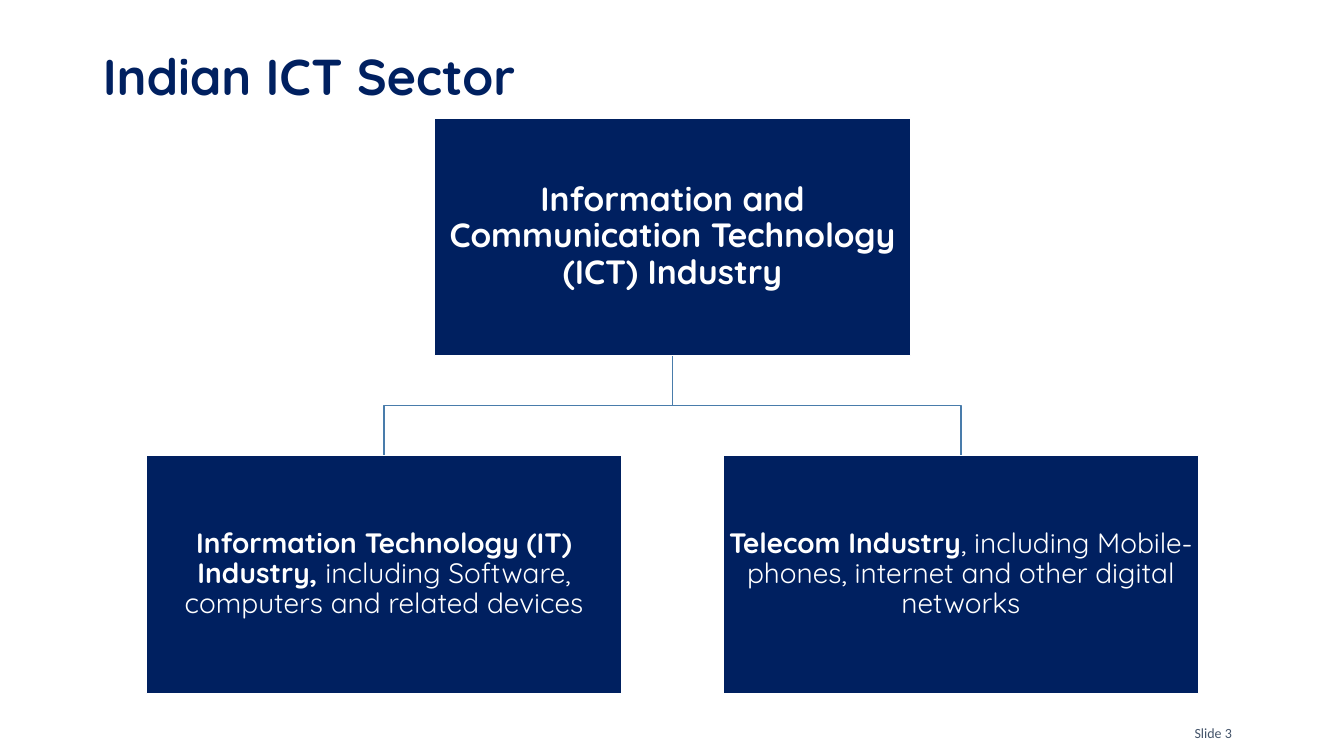
from pptx import Presentation
from pptx import util as u
from pptx.dml import color
from pptx.enum import shapes, text

NAVY, WHITE, LINE, GREY = "002060", "FFFFFF", "497CAB", "44546A"
BOX_WIDTH, BOX_HEIGHT = 4.72, 2.36
CENTRE, ROOT_TOP, BRANCH_TOP, BRANCH_OFFSET = 6.67, 1.17, 4.52, 2.86


def rgb(value):
    return color.RGBColor.from_string(value)


class ChartSlide:
    """Hold the style and the slide, and add each kind of element."""

    def __init__(self, presentation, font):
        self.font = font
        self.slide = presentation.slides.add_slide(presentation.slide_layouts[5])

    def format_run(self, run, size, colour, bold=False, font=None):
        run.font.name = font or self.font
        run.font.size = u.Pt(size)
        run.font.bold = bold
        run.font.color.rgb = rgb(colour)

    def title(self, wording, left, top, width, height):
        title = self.slide.shapes.title
        title.left, title.top = u.Inches(left), u.Inches(top)
        title.width, title.height = u.Inches(width), u.Inches(height)
        frame = title.text_frame
        frame.text = wording
        frame.auto_size = text.MSO_AUTO_SIZE.NONE
        frame.vertical_anchor = text.MSO_ANCHOR.MIDDLE
        paragraph = frame.paragraphs[0]
        paragraph.alignment = text.PP_ALIGN.LEFT
        paragraph.line_spacing = 0.9
        self.format_run(paragraph.runs[0], 36, NAVY, bold=True)

    def branch(self, start_x, start_y, end_x, end_y):
        middle = (start_y + end_y) / 2
        builder = self.slide.shapes.build_freeform(
            u.Inches(start_x), u.Inches(start_y))
        corners = [(start_x, middle), (end_x, middle), (end_x, end_y)]
        builder.add_line_segments(
            [(u.Inches(x), u.Inches(y)) for x, y in corners], close=False)
        shape = builder.convert_to_shape()
        shape.shadow.inherit = False
        shape.fill.background()
        shape.line.color.rgb = rgb(LINE)
        shape.line.width = u.Pt(1)

    def box(self, centre, top, size, inset, bold_words, plain_words=""):
        shape = self.slide.shapes.add_shape(
            shapes.MSO_SHAPE.RECTANGLE, u.Inches(centre - BOX_WIDTH / 2),
            u.Inches(top), u.Inches(BOX_WIDTH), u.Inches(BOX_HEIGHT))
        shape.shadow.inherit = False
        shape.fill.solid()
        shape.fill.fore_color.rgb = rgb(NAVY)
        shape.line.color.rgb = rgb(WHITE)
        shape.line.width = u.Pt(1)
        frame = shape.text_frame
        frame.word_wrap = True
        frame.vertical_anchor = text.MSO_ANCHOR.MIDDLE
        frame.margin_left = frame.margin_right = u.Inches(inset)
        frame.margin_top = frame.margin_bottom = u.Inches(inset)
        paragraph = frame.paragraphs[0]
        paragraph.alignment = text.PP_ALIGN.CENTER
        paragraph.line_spacing = 0.9
        for words, bold in ((bold_words, True), (plain_words, False)):
            if words:
                run = paragraph.add_run()
                run.text = words
                self.format_run(run, size, WHITE, bold)

    def label(self, wording, left, top, width, height):
        label = self.slide.shapes.add_textbox(
            u.Inches(left), u.Inches(top), u.Inches(width), u.Inches(height))
        label.text_frame.text = wording
        label.text_frame.word_wrap = False
        run = label.text_frame.paragraphs[0].runs[0]
        self.format_run(run, 10, GREY, font="Calibri")


def main():
    presentation = Presentation()
    presentation.slide_width = u.Inches(13.33)
    presentation.slide_height = u.Inches(7.5)
    chart = ChartSlide(presentation, "Quicksand")
    chart.label("Slide 3", 11.75, 7.14, 0.66, 0.27)
    chart.title("Indian ICT Sector", 0.92, 0.4, 11.5, 0.77)

    branches = [
        ("Information Technology (IT) Industry, ",
         "including Software, computers and related devices"),
        ("Telecom Industry",
         ", including Mobile-phones, internet and other digital networks"),
    ]
    centres = [CENTRE - BRANCH_OFFSET, CENTRE + BRANCH_OFFSET]
    for centre in centres:
        chart.branch(CENTRE, ROOT_TOP + BOX_HEIGHT, centre, BRANCH_TOP)
    chart.box(CENTRE, ROOT_TOP, 24, 0.02,
              "Information and Communication Technology (ICT) Industry")
    for centre, (bold_words, plain_words) in zip(centres, branches):
        chart.box(centre, BRANCH_TOP, 20, 0.01, bold_words, plain_words)

    presentation.save("out.pptx")


if __name__ == "__main__":
    main()
